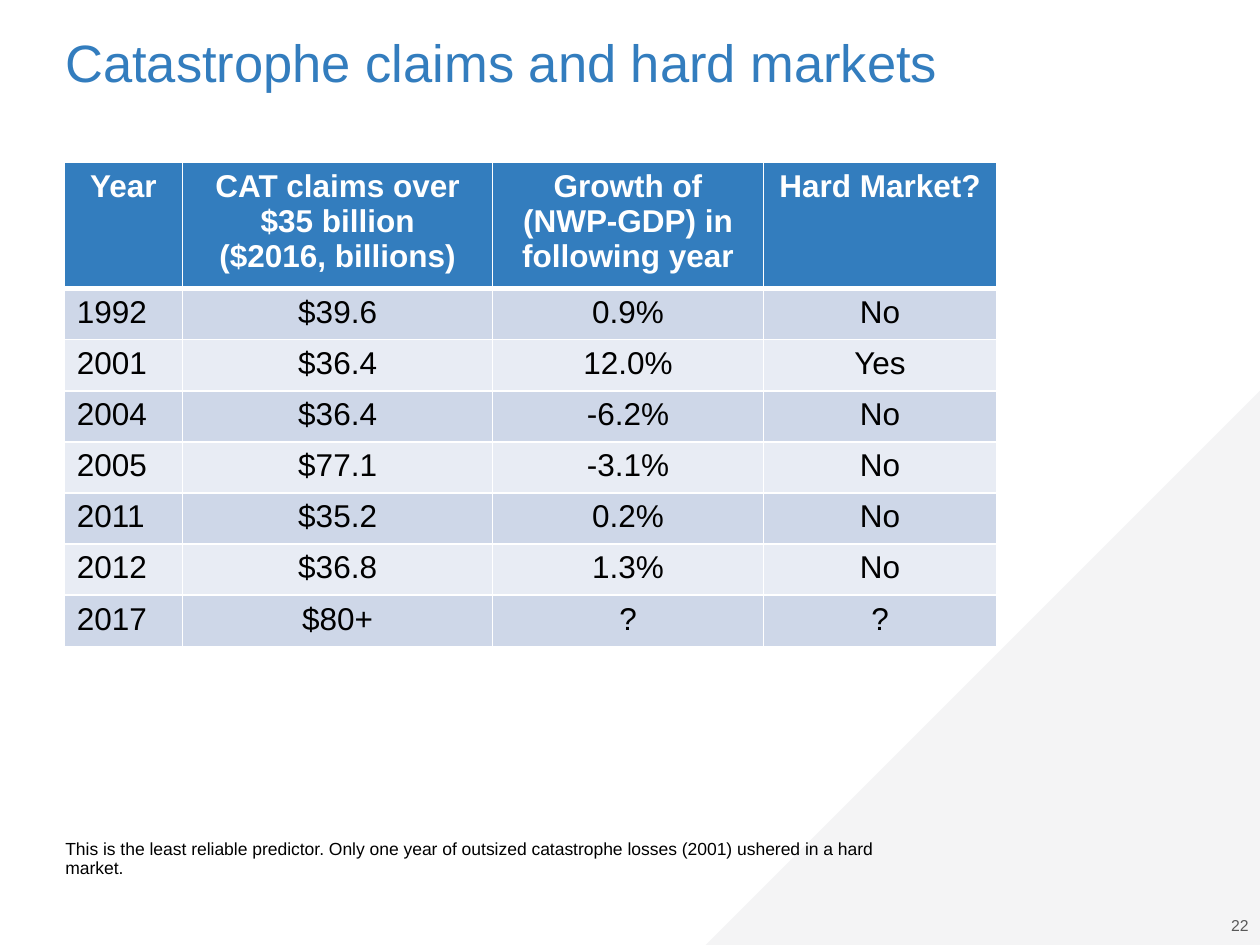
from lxml import etree
from pptx import Presentation
from pptx.dml.color import RGBColor
from pptx.enum.shapes import MSO_SHAPE
from pptx.enum.text import MSO_ANCHOR, PP_ALIGN
from pptx.oxml.ns import qn
from pptx.util import Inches, Pt

RIGHT_TRIANGLE = MSO_SHAPE.RIGHT_TRIANGLE
TOP, BOTTOM = MSO_ANCHOR.TOP, MSO_ANCHOR.BOTTOM
LEFT, CENTER, RIGHT = PP_ALIGN.LEFT, PP_ALIGN.CENTER, PP_ALIGN.RIGHT

FONT = "Arial"
BLUE, WHITE, BLACK = "337DBE", "FFFFFF", "000000"
BANDS = ("CED7E8", "E8ECF4")

COLUMN_WIDTHS = (0.94, 2.46, 2.15, 1.85)
HEADER_HEIGHT = 0.93
BODY_HEIGHT = 2.84
HEADINGS = (
    "Year",
    "CAT claims over $35 billion\n($2016, billions)",
    "Growth of (NWP-GDP) in following year",
    "Hard Market?",
)
CLAIMS = (
    ("1992", "$39.6", "0.9%", "No"),
    ("2001", "$36.4", "12.0%", "Yes"),
    ("2004", "$36.4", "-6.2%", "No"),
    ("2005", "$77.1", "-3.1%", "No"),
    ("2011", "$35.2", "0.2%", "No"),
    ("2012", "$36.8", "1.3%", "No"),
    ("2017", "$80+", "?", "?"),
)


def rgb(color):
    return RGBColor.from_string(color)


def set_fill(part, color):
    part.fill.solid()
    part.fill.fore_color.rgb = rgb(color)


def write(frame, text, size, color, align=LEFT, bold=False, spacing=None):
    frame.text = text
    for paragraph in frame.paragraphs:
        paragraph.alignment = align
        paragraph.line_spacing = spacing
        for run in paragraph.runs:
            run.font.name = FONT
            run.font.size = Pt(size)
            run.font.bold = bold
            run.font.color.rgb = rgb(color)


def add_text(slide, box, text, size, color, align=LEFT, anchor=TOP, inset=None, wrap=True):
    frame = slide.shapes.add_textbox(*map(Inches, box)).text_frame
    frame.word_wrap = wrap
    frame.vertical_anchor = anchor
    if inset is not None:
        frame.margin_left = frame.margin_right = Inches(inset)
        frame.margin_top = frame.margin_bottom = Inches(inset)
    write(frame, text, size, color, align, spacing=0.9)


def add_corner(slide):
    """Pale triangle filling the lower right corner."""
    side = Inches(4.4)
    corner = slide.shapes.add_shape(RIGHT_TRIANGLE, Inches(5.6), Inches(3.1), side, side)
    corner.rotation = 270
    corner.shadow.inherit = False
    set_fill(corner, "C6C6C9")
    tint = corner.fill._xPr.find(qn("a:solidFill"))[0]
    etree.SubElement(tint, qn("a:alpha"), val="18000")
    corner.line.fill.background()


def set_borders(cell, bottom_width):
    """Draw white rules, placed before the fill as the schema requires."""
    properties = cell._tc.get_or_add_tcPr()
    widths = {"a:lnL": 1, "a:lnR": 1, "a:lnT": 1, "a:lnB": bottom_width}
    for position, (side, width) in enumerate(widths.items()):
        rule = etree.Element(qn(side), w=str(Pt(width)))
        fill = etree.SubElement(rule, qn("a:solidFill"))
        etree.SubElement(fill, qn("a:srgbClr"), val=WHITE)
        properties.insert(position, rule)


def add_claims_table(slide):
    rows = (HEADINGS, *CLAIMS)
    table = slide.shapes.add_table(
        len(rows), len(HEADINGS), Inches(0.51), Inches(1.29),
        Inches(sum(COLUMN_WIDTHS)), Inches(HEADER_HEIGHT + BODY_HEIGHT),
    ).table
    for column, width in zip(table.columns, COLUMN_WIDTHS):
        column.width = Inches(width)
    for r, values in enumerate(rows):
        header = r == 0
        table.rows[r].height = Inches(HEADER_HEIGHT if header else BODY_HEIGHT / len(CLAIMS))
        for c, value in enumerate(values):
            cell = table.cell(r, c)
            align = CENTER if header or c else LEFT
            write(cell.text_frame, value, 18, WHITE if header else BLACK, align, header)
            set_fill(cell, BLUE if header else BANDS[(r - 1) % 2])
            set_borders(cell, 3 if header else 1)
            if r == 1:
                cell._tc.tcPr.find(qn("a:lnT")).set("w", str(Pt(3)))


def main():
    deck = Presentation()
    deck.slide_width, deck.slide_height = Inches(10), Inches(7.5)
    slide = deck.slides.add_slide(deck.slide_layouts[6])

    add_text(slide, (9.43, 7.29, 0.48, 0.13), "22", 9, "404040", RIGHT, BOTTOM, inset=0)
    add_corner(slide)
    add_text(slide, (0.42, 0.25, 9.25, 1.04), "Catastrophe claims and hard markets", 30, BLUE)
    add_claims_table(slide)
    add_text(
        slide, (0.42, 6.62, 7.1, 0.3),
        "This is the least reliable predictor. Only one year of outsized "
        "catastrophe losses (2001) ushered in a hard market.",
        10, BLACK, wrap=False,
    )
    deck.save("out.pptx")


if __name__ == "__main__":
    main()
